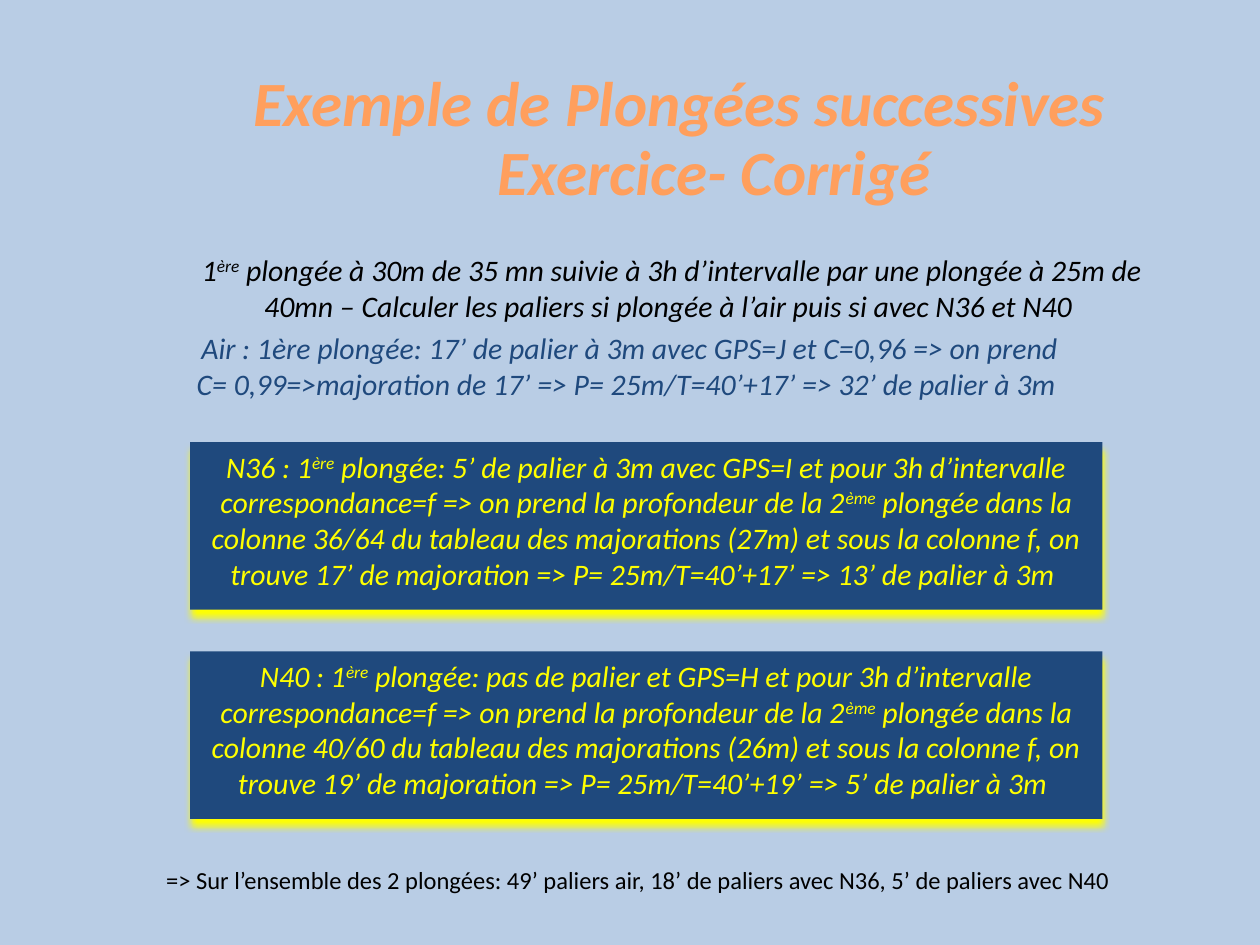
from dataclasses import dataclass

from lxml.etree import SubElement
from pptx import Presentation
from pptx.dml.color import RGBColor
from pptx.enum.shapes import MSO_SHAPE
from pptx.enum.text import MSO_ANCHOR, PP_ALIGN
from pptx.oxml.ns import qn
from pptx.util import Inches, Pt


@dataclass(frozen=True)
class Theme:
    font: str = "Calibri"
    background: str = "B9CDE5"
    navy: str = "1F497D"
    yellow: str = "FFFF00"
    orange: str = "FF9F5D"
    black: str = "000000"
    title_size: float = 36
    body_size: float = 17
    summary_size: float = 14


@dataclass(frozen=True)
class Box:
    left: float
    top: float
    width: float
    height: float

    def inner(self, left, top, width, height):
        """Return a box offset from this one's corner, in inches."""
        return Box(self.left + left, self.top + top, width, height)

    def lengths(self):
        return [Inches(v) for v in (self.left, self.top, self.width, self.height)]


THEME = Theme()
PAGE = Box(0, 0, 10, 7.5)


def write(shape, text, size, color, bold=False, italic=True,
          align=PP_ALIGN.CENTER, anchor=MSO_ANCHOR.TOP):
    """Fill a shape with one paragraph; text between ^ marks is superscript."""
    frame = shape.text_frame
    frame.word_wrap = True
    frame.vertical_anchor = anchor
    paragraph = frame.paragraphs[0]
    paragraph.alignment = align
    font = paragraph.font
    font.name, font.size, font.bold, font.italic = THEME.font, Pt(size), bold, italic
    font.color.rgb = RGBColor.from_string(color)
    for index, piece in enumerate(text.split("^")):
        run = paragraph.add_run()
        run.text = piece
        if index % 2:
            run.font._element.set("baseline", "30000")


def add_text(slide, box, text, size, color, **style):
    write(slide.shapes.add_textbox(*box.lengths()), text, size, color, **style)


def add_panel(slide, box, text, fill, color):
    panel = slide.shapes.add_shape(MSO_SHAPE.RECTANGLE, *box.lengths())
    panel.fill.solid()
    panel.fill.fore_color.rgb = RGBColor.from_string(fill)
    panel.line.fill.background()
    panel.shadow.inherit = False
    write(panel, text, THEME.body_size, color)
    return panel


def add_glow_shadow(shape, color):
    effects = shape._element.spPr.find(qn("a:effectLst"))
    shadow = SubElement(effects, qn("a:outerShdw"), blurRad=str(Pt(4)),
                        dist=str(Pt(4)), dir="5400000", algn="t", rotWithShape="0")
    SubElement(shadow, qn("a:srgbClr"), val=color)


def add_heading(slide, box):
    add_text(slide, box.inner(0, 0, 8.5, 1.61), "Exemple de Plongées successives",
             THEME.title_size, THEME.orange, bold=True, anchor=MSO_ANCHOR.MIDDLE)
    add_text(slide, box.inner(1.03, 1, 7, 0.84), "Exercice- Corrigé",
             THEME.title_size, THEME.orange, bold=True)


def add_question_and_air_answer(slide, box):
    add_text(slide, box.inner(0.12, 0, 7.67, 0.84),
             "1^ère^ plongée à 30m de 35 mn suivie à 3h d’intervalle par une plongée "
             "à 25m de 40mn – Calculer les paliers si plongée à l’air puis si avec "
             "N36 et N40 ", THEME.body_size, THEME.black)
    add_panel(slide, box.inner(0, 0.62, 7.24, 0.84),
              "Air : 1ère plongée: 17’ de palier à 3m avec GPS=J et C=0,96 => on prend "
              "C= 0,99=>majoration de 17’ => P= 25m/T=40’+17’ => 32’ de palier à 3m ",
              THEME.background, THEME.navy)


def add_nitrox_answers(slide, box):
    """Stack one panel per gas mix from the top of the box."""
    answers = [
        ("N36", "5’ de palier à 3m avec", "I", "36/64", 27, 17, 13),
        ("N40", "pas de palier et", "H", "40/60", 26, 19, 5),
    ]
    panel_height = 1.33
    pitch = box.height - panel_height
    for row, (mix, first, group, column, depth, extra, stop) in enumerate(answers):
        text = (f"{mix} : 1^ère^ plongée: {first} GPS={group} et pour 3h d’intervalle "
                "correspondance=f => on prend la profondeur de la 2^ème^ plongée dans "
                f"la colonne {column} du tableau des majorations ({depth}m) et sous la "
                f"colonne f, on trouve {extra}’ de majoration => "
                f"P= 25m/T=40’+{extra}’ => {stop}’ de palier à 3m ")
        panel = add_panel(slide, box.inner(0, row * pitch, box.width, panel_height),
                          text, THEME.navy, THEME.yellow)
        add_glow_shadow(panel, THEME.yellow)


def add_summary(slide, box):
    add_text(slide, box,
             "=> Sur l’ensemble des 2 plongées: 49’ paliers air, 18’ de paliers avec "
             "N36, 5’ de paliers avec N40", THEME.summary_size, THEME.black,
             italic=False, align=PP_ALIGN.LEFT)


def main():
    presentation = Presentation()
    presentation.slide_width = Inches(PAGE.width)
    presentation.slide_height = Inches(PAGE.height)
    slide = presentation.slides.add_slide(presentation.slide_layouts[6])
    slide.background.fill.solid()
    slide.background.fill.fore_color.rgb = RGBColor.from_string(THEME.background)

    add_heading(slide, PAGE.inner(1.14, 0, 8.5, 1.84))
    add_question_and_air_answer(slide, PAGE.inner(1.38, 1.95, 7.79, 1.46))
    add_nitrox_answers(slide, PAGE.inner(1.51, 3.51, 7.24, 2.99))
    add_summary(slide, PAGE.inner(1.22, 6.82, 7.94, 0.34))
    presentation.save("out.pptx")


if __name__ == "__main__":
    main()
